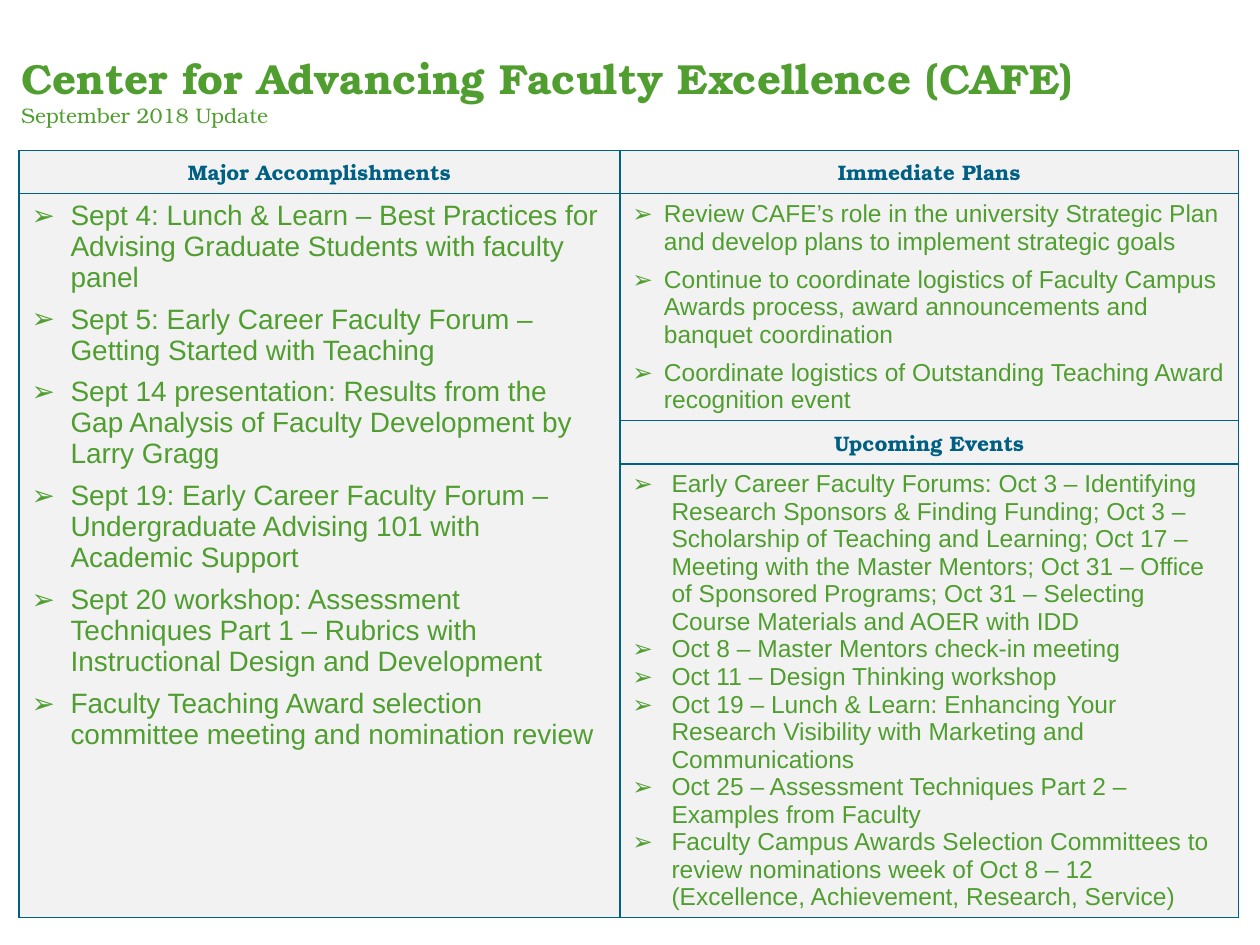
from lxml.etree import SubElement
from pptx import Presentation
from pptx.dml.color import RGBColor
from pptx.enum.text import MSO_ANCHOR, PP_ALIGN
from pptx.oxml import parse_xml
from pptx.oxml.ns import nsdecls, qn
from pptx.util import Emu, Inches, Pt

COLORS = {"green": "509E2F", "blue": "005F83", "panel": "F2F2F2"}
SERIF, SANS = "TeX Gyre Bonum", "Arial"

ACCOMPLISHMENTS = [
    "Sept 4: Lunch & Learn – Best Practices for Advising Graduate Students with faculty panel",
    "Sept 5: Early Career Faculty Forum – Getting Started with Teaching",
    "Sept 14 presentation: Results from the Gap Analysis of Faculty Development by Larry Gragg",
    "Sept 19: Early Career Faculty Forum – Undergraduate Advising 101 with Academic Support",
    "Sept 20 workshop: Assessment Techniques Part 1 – Rubrics with Instructional Design and Development",
    "Faculty Teaching Award selection committee meeting and nomination review",
]
PLANS = [
    "Review CAFE’s role in the university Strategic Plan and develop plans to implement strategic goals",
    "Continue to coordinate logistics of Faculty Campus Awards process, award announcements and banquet coordination",
    "Coordinate logistics of Outstanding Teaching Award recognition event",
]
EVENTS = [
    "Early Career Faculty Forums: Oct 3 – Identifying Research Sponsors & Finding Funding; "
    "Oct 3 – Scholarship of Teaching and Learning; Oct 17 – Meeting with the Master Mentors; "
    "Oct 31 – Office of Sponsored Programs; Oct 31 – Selecting Course Materials and AOER with IDD",
    "Oct 8 – Master Mentors check-in meeting",
    "Oct 11 – Design Thinking workshop",
    "Oct 19 – Lunch & Learn: Enhancing Your Research Visibility with Marketing and Communications",
    "Oct 25 – Assessment Techniques Part 2 – Examples from Faculty",
    "Faculty Campus Awards Selection Committees to review nominations week of Oct 8 – 12 "
    "(Excellence, Achievement, Research, Service)",
]


class SlideBuilder:
    def __init__(self, prs):
        self.width, self.height = prs.slide_width, prs.slide_height
        self.s = prs.slides.add_slide(prs.slide_layouts[6])

    def x(self, share):
        return Emu(int(self.width * share))

    def y(self, share):
        return Emu(int(self.height * share))

    def color(self, name):
        return RGBColor.from_string(COLORS[name])

    def paragraph(self, tf, i):
        return tf.paragraphs[0] if i == 0 else tf.add_paragraph()

    def run(self, p, text, size, font, color, bold=False):
        r = p.add_run()
        r.text = text
        r.font.size, r.font.name, r.font.bold = Pt(size), font, bold
        r.font.color.rgb = self.color(color)

    def title(self, left, top, width, height, lines):
        sp = self.s.shapes.add_textbox(self.x(left), self.y(top), self.x(width), self.y(height))
        tf = sp.text_frame
        tf.word_wrap = True
        for i, (text, size, bold) in enumerate(lines):
            self.run(self.paragraph(tf, i), text, size, SERIF, "green", bold)

    def table(self, left, top, cols, rows):
        frame = self.s.shapes.add_table(len(rows), len(cols), self.x(left), self.y(top),
                                        self.x(sum(cols)), self.y(sum(rows)))
        table = frame.table
        table.first_row = table.horz_banding = False
        for col, share in zip(table.columns, cols):
            col.width = self.x(share)
        for row, share in zip(table.rows, rows):
            row.height = self.y(share)
        for cell in table.iter_cells():
            cell.fill.solid()
            cell.fill.fore_color.rgb = self.color("panel")
            self.borders(cell)
        return table

    def borders(self, cell):
        tc_pr = cell._tc.get_or_add_tcPr()
        for i, side in enumerate(("lnL", "lnR", "lnT", "lnB")):
            tc_pr.insert(i, parse_xml(
                f'<a:{side} {nsdecls("a")} w="{Pt(1)}"><a:solidFill>'
                f'<a:srgbClr val="{COLORS["blue"]}"/></a:solidFill></a:{side}>'))

    def heading(self, cell, text):
        cell.vertical_anchor = MSO_ANCHOR.MIDDLE
        p = cell.text_frame.paragraphs[0]
        p.alignment = PP_ALIGN.CENTER
        self.run(p, text, 12, SERIF, "blue", True)

    def bullets(self, cell, items, size, indent, gap=0, anchor=MSO_ANCHOR.MIDDLE):
        cell.vertical_anchor = anchor
        for i, text in enumerate(items):
            p = self.paragraph(cell.text_frame, i)
            p_pr = p._p.get_or_add_pPr()
            p_pr.set("marL", str(Inches(indent)))
            p_pr.set("indent", str(-Inches(indent)))
            bu_color = SubElement(p_pr, qn("a:buClr"))
            SubElement(bu_color, qn("a:srgbClr"), val=COLORS["green"])
            SubElement(p_pr, qn("a:buFont"), typeface=SANS)
            SubElement(p_pr, qn("a:buChar"), char="➢")
            p.space_before = Pt(gap if i else 0)
            self.run(p, text, size, SANS, "green")


def main():
    prs = Presentation()
    prs.slide_width, prs.slide_height = Inches(10), Inches(7.5)
    slide = SlideBuilder(prs)

    # Table: accomplishments on the left, plans above events on the right
    table = slide.table(0.015, 0.159, cols=(0.477, 0.491), rows=(0.046, 0.24, 0.046, 0.48))
    table.cell(1, 0).merge(table.cell(3, 0))
    slide.heading(table.cell(0, 0), "Major Accomplishments")
    slide.bullets(table.cell(1, 0), ACCOMPLISHMENTS, 16, 0.31, gap=6, anchor=MSO_ANCHOR.TOP)
    slide.heading(table.cell(0, 1), "Immediate Plans")
    slide.bullets(table.cell(1, 1), PLANS, 14, 0.25, gap=6)
    slide.heading(table.cell(2, 1), "Upcoming Events")
    slide.bullets(table.cell(3, 1), EVENTS, 14, 0.31)

    # Title and date
    slide.title(0.007, 0.049, 0.983, 0.095, [
        ("Center for Advancing Faculty Excellence (CAFE)", 24, True),
        ("September 2018 Update", 12, False),
    ])
    prs.save("out.pptx")


if __name__ == "__main__":
    main()
